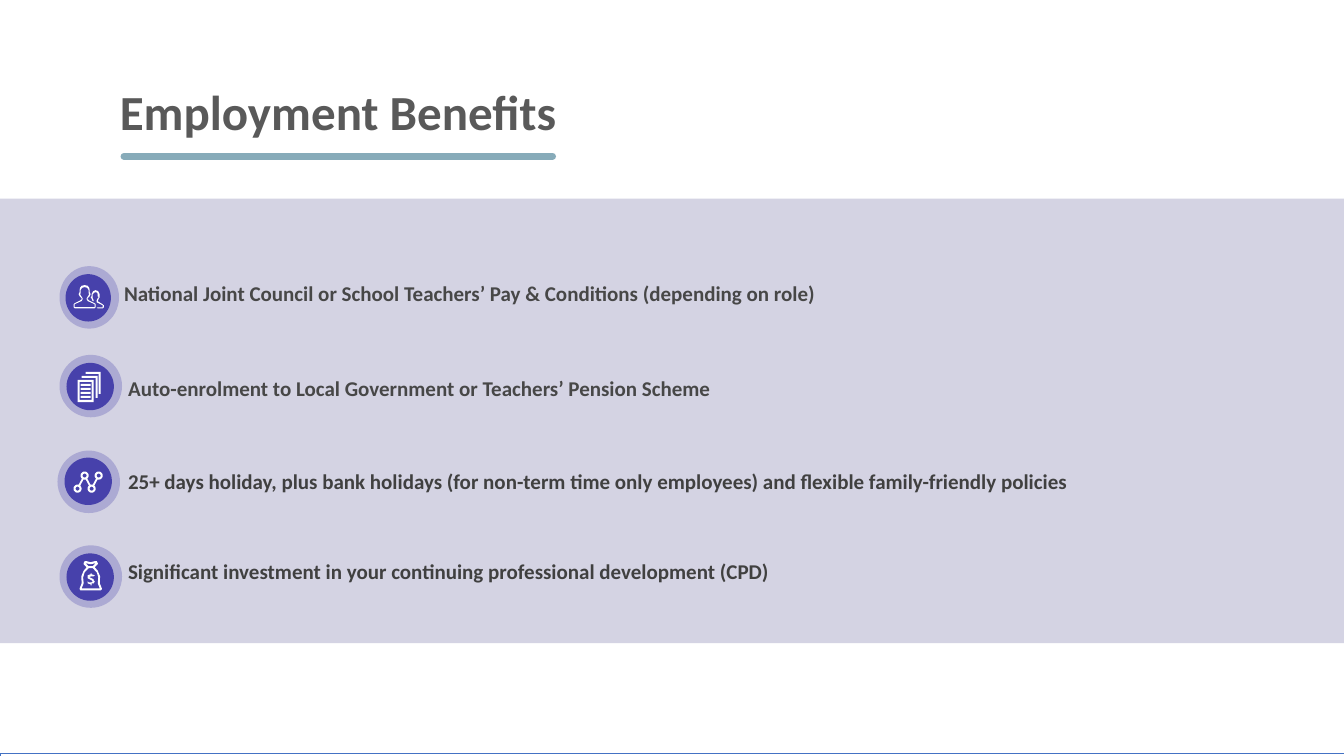
"""Build the Employment Benefits slide."""
from dataclasses import dataclass
from math import cos, hypot, pi, sin

from lxml import etree
from pptx import Presentation
from pptx.dml.color import RGBColor
from pptx.enum.shapes import MSO_CONNECTOR, MSO_SHAPE
from pptx.enum.text import MSO_ANCHOR, MSO_AUTO_SIZE
from pptx.oxml.ns import qn
from pptx.util import Inches, Pt

RECTANGLE, OVAL = MSO_SHAPE.RECTANGLE, MSO_SHAPE.OVAL
STRAIGHT = MSO_CONNECTOR.STRAIGHT
TOP, BOTTOM = MSO_ANCHOR.TOP, MSO_ANCHOR.BOTTOM
FIT_SHAPE = MSO_AUTO_SIZE.SHAPE_TO_FIT_TEXT


@dataclass(frozen=True)
class Theme:
    """Colours, font and type sizes of the slide."""
    font: str = "Calibri"
    title: str = "595959"
    text: str = "474747"
    dark_text: str = "404040"
    rule: str = "87ABB9"
    band: str = "9593B9"
    accent: str = "4741AB"
    white: str = "FFFFFF"
    edge: str = "4472C4"
    title_size: int = 35
    text_size: int = 15


class SlideBuilder:
    """Draws styled elements on the current slide."""

    def __init__(self, slide, theme):
        self.slide = slide
        self.theme = theme

    def paint(self, shape, color, opacity=100, edge=None):
        """Fill a shape and set its outline."""
        shape.shadow.inherit = False
        shape.fill.solid()
        shape.fill.fore_color.rgb = RGBColor.from_string(color)
        if opacity < 100:
            swatch = next(shape.fill._xPr.iter(qn("a:srgbClr")))
            etree.SubElement(swatch, qn("a:alpha"), val=str(opacity * 1000))
        if edge:
            shape.line.color.rgb = RGBColor.from_string(edge)
            shape.line.width = Pt(0.5)
        else:
            shape.line.fill.background()

    def shape(self, kind, frame, color, opacity=100, edge=None, parent=None):
        """Add a preset shape."""
        shapes = (parent or self.slide).shapes
        self.paint(shapes.add_shape(kind, *map(Inches, frame)), color, opacity, edge)

    def text(self, frame, words, size, color, margins=(0, 0), anchor=TOP, parent=None):
        """Add one bold paragraph in a text box."""
        box = (parent or self.slide).shapes.add_textbox(*map(Inches, frame))
        body = box.text_frame
        body.word_wrap = True
        body.vertical_anchor = anchor
        body.margin_left = body.margin_right = Inches(margins[0])
        body.margin_top = body.margin_bottom = Inches(margins[1])
        if anchor == TOP:
            body.auto_size = FIT_SHAPE
        para = body.paragraphs[0]
        para.text = words
        para.line_spacing = 0.9
        para.font.name = self.theme.font
        para.font.size = Pt(size)
        para.font.bold = True
        para.font.color.rgb = RGBColor.from_string(color)

    def rule(self, left, right, y, color, width):
        """Add a horizontal line with round ends."""
        line = self.slide.shapes.add_connector(
            STRAIGHT, Inches(left), Inches(y), Inches(right), Inches(y))
        line.line.color.rgb = RGBColor.from_string(color)
        line.line.width = Pt(width)
        properties = line._element.spPr
        properties.find(qn("a:ln")).set("cap", "rnd")
        etree.SubElement(properties, qn("a:effectLst"))

    def icon(self, contours, parent):
        """Add a white outline from contours in hundredths of an inch."""
        scaled = [[(x * 10, y * 10) for x, y in contour] for contour in contours]
        builder = parent.shapes.build_freeform(*scaled[0][0], scale=Inches(0.001))
        for number, contour in enumerate(scaled):
            if number:
                builder.move_to(*contour[0])
            builder.add_line_segments(contour[1:], close=True)
        self.paint(builder.convert_to_shape(), self.theme.white)

    def benefit(self, words, text_frame, color, halo, core, icons):
        """Add a benefit with its round icon as a group."""
        group = self.slide.shapes.add_group_shape()
        self.text(text_frame, words, self.theme.text_size, color, parent=group)
        self.shape(OVAL, halo, self.theme.accent, 28, parent=group)
        self.shape(OVAL, core, self.theme.accent, parent=group)
        for contours in icons:
            self.icon(contours, group)


def mirrored(axis, half):
    """Close a right half with its reflection."""
    return half + [(2 * axis - x, y) for x, y in reversed(half)]


def block(left, top, right, bottom):
    """Return the corners of a rectangle."""
    return [(left, top), (right, top), (right, bottom), (left, bottom)]


def circle(center, radius):
    """Return points around a circle."""
    return [(center[0] + radius * cos(step * pi / 12),
             center[1] + radius * sin(step * pi / 12)) for step in range(24)]


def link(start, end, radius=4, half_width=0.9):
    """Return a bar between the rims of two nodes."""
    run, rise = end[0] - start[0], end[1] - start[1]
    length = hypot(run, rise)
    run, rise = run / length, rise / length
    return [(x + sign * run * radius - side * rise * half_width,
             y + sign * rise * radius + side * run * half_width)
            for (x, y), sign, side in ((start, 1, 1), (end, -1, 1),
                                       (end, -1, -1), (start, 1, -1))]


def page_edge(left, top, right):
    """Return the visible edge of a page lying behind."""
    return [(left, top), (right, top), (right, top + 22), (right - 2, top + 22),
            (right - 2, top + 2), (left, top + 2)]


FRONT_PERSON = [
    mirrored(84, [(84, 283), (87, 283.7), (88.5, 285.5), (89, 288), (89, 290), (90, 292),
                  (89, 294), (87, 296), (87, 297), (88.5, 298.3), (94, 301), (95, 302),
                  (95, 305), (94, 306)]),
    mirrored(84, [(84, 285), (86.5, 285.7), (88, 288), (88, 291), (88.5, 292), (88, 293),
                  (86, 296), (86, 297), (87, 298.8), (94, 302), (94, 305)])]
BACK_PERSON = [[
    (95, 288), (97.5, 289), (99, 292), (99, 295), (98, 296.5), (97, 299), (102, 302),
    (103, 303), (103, 305), (102, 306), (97, 306), (96, 305.5), (97, 305), (102, 305),
    (102, 303), (96, 300), (96, 298), (97, 296), (98, 295), (97, 294), (97, 292),
    (96.5, 290.5), (95, 290), (93.5, 290.5), (92, 292), (92, 296), (93, 298), (93, 299),
    (92, 299), (91, 296.5), (90, 295), (91, 294), (91, 292), (92.5, 289)]]
PAGES = [block(77, 377, 93, 399), block(79, 379, 91, 397),
         page_edge(81, 373, 97), page_edge(85, 369, 100)]
PAGES += [block(80, top, 90, top + 2) for top in range(381, 394, 4)]
NODES = [(77, 485), (84, 472), (91, 485), (98, 472)]
GRAPH = [circle(node, radius) for node in NODES for radius in (4, 2)]
GRAPH += [link(start, end) for start, end in zip(NODES, NODES[1:])]
MONEY_BAG = [
    mirrored(90, [(90, 558), (94, 557), (96, 557), (97, 559), (97, 560), (94, 563),
                  (97, 566.5), (99.3, 572), (99, 579), (101, 584), (101, 585), (100, 586)]),
    mirrored(90, [(90, 560), (95, 559), (92, 562)]),
    mirrored(90, [(92, 564), (96, 568), (97.5, 573), (97, 579), (99, 584)]),
    [(93, 576), (94, 577), (93, 579), (91, 579), (91, 581), (90, 581), (90, 580), (87, 579),
     (87, 577), (88, 578), (91, 578), (92, 577), (91, 576), (89, 575), (87, 574), (87, 571),
     (90, 570), (90, 569), (91, 569), (91, 570), (94, 571), (93, 572), (91, 572),
     (89, 572.5), (89, 573), (91, 574), (93, 575)]]


def main():
    """Create and save the deck."""
    theme = Theme()
    deck = Presentation()
    deck.slide_width, deck.slide_height = Inches(13.33), Inches(7.5)
    page = SlideBuilder(deck.slides.add_slide(deck.slide_layouts[6]), theme)
    page.shape(RECTANGLE, (0, 7.47, 13.33, 0.05), theme.white, edge=theme.edge)
    page.text((1.09, 0, 10.93, 1.45), "Employment Benefits", theme.title_size,
              theme.title, margins=(0.1, 0.05), anchor=BOTTOM)
    page.rule(1.23, 5.48, 1.55, theme.rule, 5)
    page.shape(RECTANGLE, (0, 1.97, 13.33, 4.41), theme.band, 40)
    benefits = [
        ("National Joint Council or School Teachers’ Pay & Conditions (depending on role)",
         (1.23, 2.81, 7.45, 0.23), theme.text, (0.59, 2.64, 0.59, 0.62),
         (0.65, 2.72, 0.45, 0.47), (FRONT_PERSON, BACK_PERSON)),
        ("Auto-enrolment to Local Government or Teachers’ Pension Scheme",
         (1.27, 3.75, 6.42, 0.23), theme.text, (0.59, 3.52, 0.62, 0.62),
         (0.66, 3.6, 0.47, 0.47), (PAGES,)),
        ("25+ days holiday, plus bank holidays (for non-term time only employees) "
         "and flexible family-friendly policies",
         (1.27, 4.68, 9.72, 0.23), theme.dark_text, (0.57, 4.47, 0.62, 0.62),
         (0.64, 4.54, 0.47, 0.47), (GRAPH,)),
        ("Significant investment in your continuing professional development (CPD)",
         (1.27, 5.57, 7.5, 0.23), theme.dark_text, (0.59, 5.41, 0.62, 0.62),
         (0.66, 5.49, 0.47, 0.47), (MONEY_BAG,))]
    for benefit in benefits:
        page.benefit(*benefit)
    deck.save("out.pptx")


if __name__ == "__main__":
    main()
